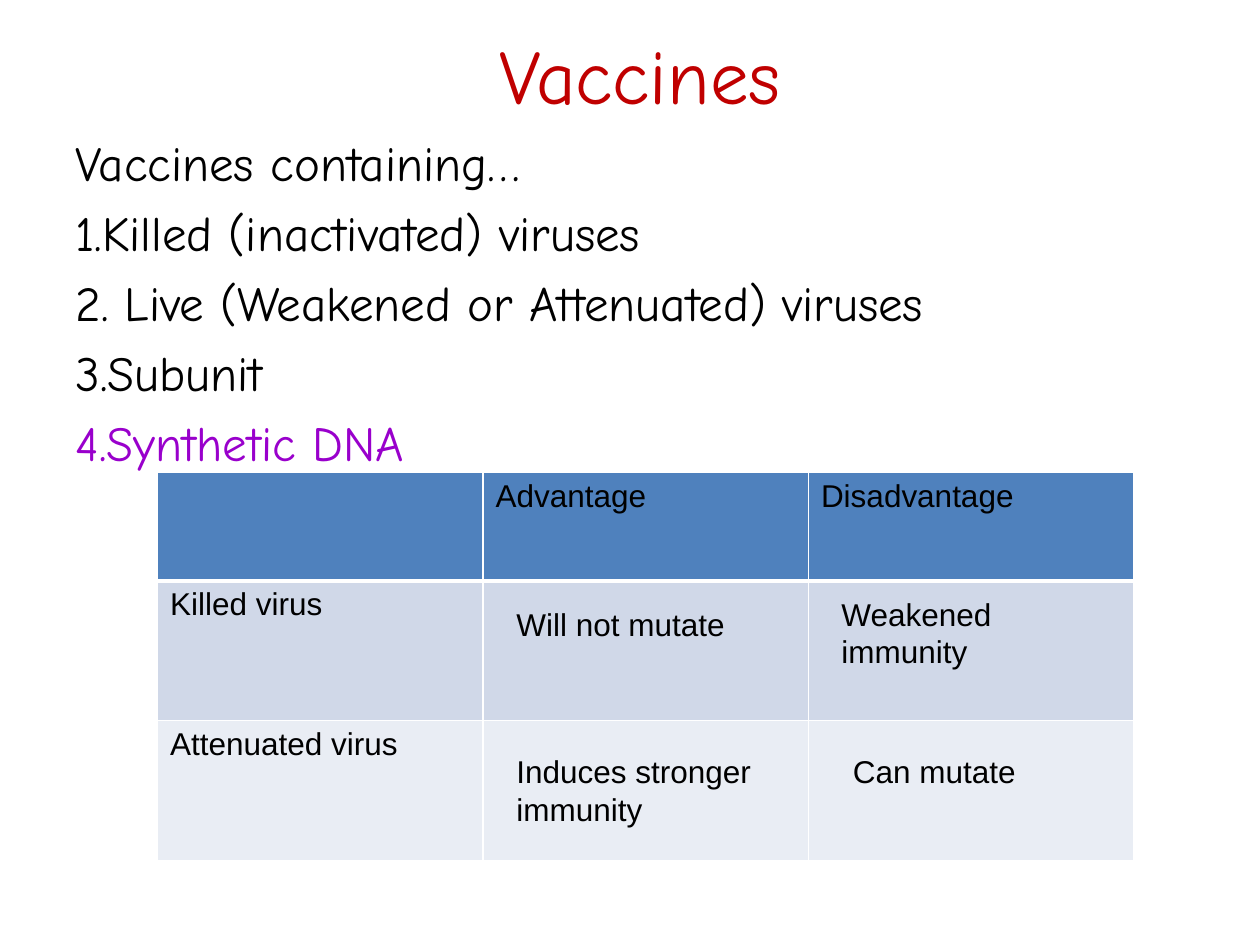
from dataclasses import dataclass

from lxml.etree import SubElement as Sub
from pptx import Presentation
from pptx.dml.color import RGBColor as Rgb
from pptx.enum.text import MSO_ANCHOR as Anchor, MSO_AUTO_SIZE as Fit, PP_ALIGN as Align
from pptx.oxml.ns import qn
from pptx.util import Inches, Pt

HUES = {
    "black": "000000", "white": "FFFFFF", "red": "C00000", "purple": "9900CC",
    "head": "4F81BD", "odd": "D0D8E8", "even": "E9EDF4",
}
HAND, SANS = "Comic Neue", "Arial"


@dataclass
class Note:
    """A text box that lies over a table cell."""

    left: float
    top: float
    width: float
    height: float
    lines: tuple[str, ...]
    wrap: bool = True


NOTES = [
    Note(4, 4.75, 2.08, 0.4, ("Will not mutate",)),
    Note(6.58, 4.67, 2.17, 0.71, ("Weakened immunity",)),
    Note(4, 5.92, 2.15, 0.71, ("Induces stronger", "immunity"), False),
    Note(6.67, 5.92, 1.51, 0.4, ("Can mutate",), False),
]
ITEMS = [
    "Killed (inactivated) viruses",
    " Live (Weakened or Attenuated) viruses",
    "Subunit",
    "Synthetic DNA",
]
ROWS = [
    ("head", 0.86, ("", "Advantage", "Disadvantage")),
    ("odd", 1.11, ("Killed virus", "", "")),
    ("even", 1.11, ("Attenuated virus", "", "")),
]


def style(para, face: str, size: float, hue: str = "black") -> None:
    """Set the font of a paragraph."""
    font = para.font
    font.name, font.size = face, Pt(size)
    font.color.rgb = Rgb.from_string(HUES[hue])


def add_box(slide, left: float, top: float, width: float, height: float,
            lines, wrap: bool = True):
    """Add a text box with one paragraph a line."""
    box = slide.shapes.add_textbox(*map(Inches, (left, top, width, height)))
    frame = box.text_frame
    frame.word_wrap = wrap
    frame.text = "\n".join(lines)
    return frame


def number(para) -> None:
    """Number a paragraph with no indent."""
    props = para._p.get_or_add_pPr()
    props.set("marL", "0")
    props.set("indent", "0")
    mark = Sub(props, qn("a:buAutoNum"), type="arabicPeriod")
    props.insert(list(props).index(props.find(qn("a:defRPr"))), mark)


def edge(cell, base: float) -> None:
    """Draw white lines around a cell."""
    props = cell._tc.get_or_add_tcPr()
    for side, width in zip("LRTB", (1, 1, 1, base)):
        line = Sub(props, qn(f"a:ln{side}"), w=str(Pt(width)))
        Sub(Sub(line, qn("a:solidFill")), qn("a:srgbClr"), val=HUES["white"])


def add_grid(slide) -> None:
    """Add the table of virus types."""
    size = map(Inches, (1.25, 3.75, 7.75, 3.08))
    table = slide.shapes.add_table(len(ROWS), 3, *size).table
    for row, (hue, height, words) in zip(table.rows, ROWS):
        row.height = Inches(height)
        for cell, text in zip(row.cells, words):
            cell.text = text
            style(cell.text_frame.paragraphs[0], SANS, 18)
            edge(cell, 3 if hue == "head" else 1)
            cell.fill.solid()
            cell.fill.fore_color.rgb = Rgb.from_string(HUES[hue])


def main() -> None:
    """Build the slide and save it."""
    deck = Presentation()
    deck.slide_width, deck.slide_height = Inches(10), Inches(7.5)
    slide = deck.slides.add_slide(deck.slide_layouts[6])

    title = add_box(slide, 0.58, -0.04, 9, 1.25, ["Vaccines"])
    title.vertical_anchor = Anchor.MIDDLE
    title.paragraphs[0].alignment = Align.CENTER
    style(title.paragraphs[0], HAND, 44, "red")

    body = add_box(slide, 0.5, 1, 8.92, 2.42, ["Vaccines containing…", *ITEMS])
    for spot, para in enumerate(body.paragraphs):
        para.space_before = Pt(6.5)
        style(para, HAND, 28, "purple" if spot == len(ITEMS) else "black")
        if spot:
            number(para)

    add_grid(slide)
    for note in NOTES:
        frame = add_box(slide, note.left, note.top, note.width, note.height,
                        note.lines, note.wrap)
        frame.auto_size = Fit.SHAPE_TO_FIT_TEXT
        for para in frame.paragraphs:
            style(para, SANS, 18)

    deck.save("out.pptx")


if __name__ == "__main__":
    main()
